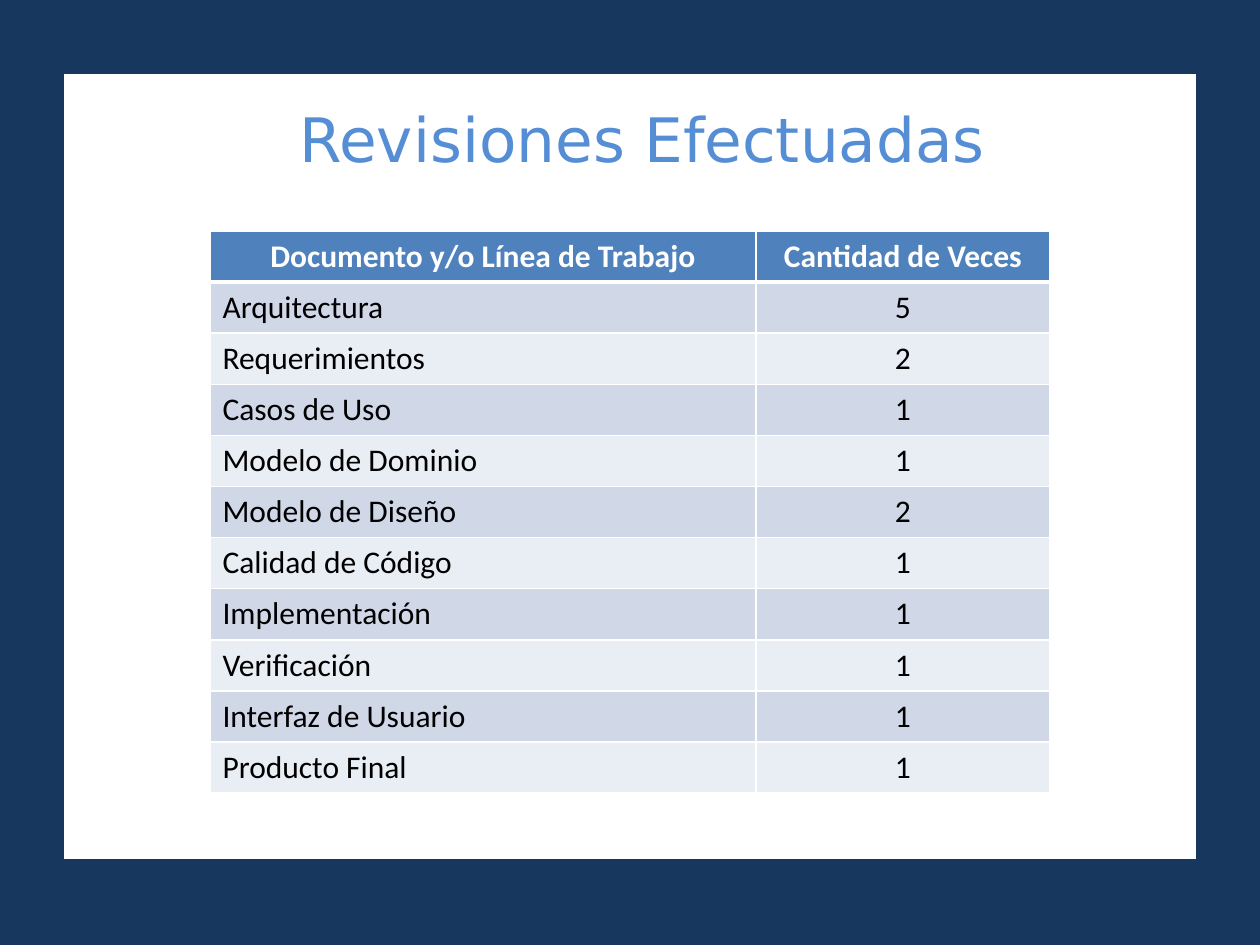
from lxml import etree
from pptx import Presentation
from pptx.dml.color import RGBColor
from pptx.enum.shapes import MSO_SHAPE
from pptx.enum.text import MSO_ANCHOR, MSO_AUTO_SIZE, PP_ALIGN
from pptx.oxml.ns import qn
from pptx.util import Emu, Pt

RECTANGLE = MSO_SHAPE.RECTANGLE
TOP = MSO_ANCHOR.TOP
NO_AUTOFIT = MSO_AUTO_SIZE.NONE
CENTER, LEFT = PP_ALIGN.CENTER, PP_ALIGN.LEFT

TITLE = "Revisiones Efectuadas"
HEADER = ("Documento y/o Línea de Trabajo", "Cantidad de Veces")
REVIEWS = [
    ("Arquitectura", 5),
    ("Requerimientos", 2),
    ("Casos de Uso", 1),
    ("Modelo de Dominio", 1),
    ("Modelo de Diseño", 2),
    ("Calidad de Código", 1),
    ("Implementación", 1),
    ("Verificación", 1),
    ("Interfaz de Usuario", 1),
    ("Producto Final", 1),
]

NAVY, WHITE, BLACK = "17375E", "FFFFFF", "000000"
TITLE_BLUE, HEADER_BLUE = "558ED5", "4F81BD"
BANDS = ("D0D8E8", "E9EDF4")

SLIDE_SIZE = (1260, 945)
PANEL_BOX = (63, 73, 1134, 787)
TITLE_BOX = (112, 95, 1061, 286)
TABLE_LEFT, TABLE_TOP = 210, 231
COLUMN_WIDTHS = (546, 294)
ROW_HEIGHT = 51


def px(length):
    return Emu(length * 914400 // 126)


def rgb(value):
    return RGBColor.from_string(value)


def format_text(frame, font_name, size, color, align, bold=False):
    paragraph = frame.paragraphs[0]
    paragraph.alignment = align
    font = paragraph.runs[0].font
    font.name, font.size, font.bold = font_name, Pt(size), bold
    font.color.rgb = rgb(color)


def set_borders(cell, widths):
    properties = cell._tc.get_or_add_tcPr()
    for position, (side, width) in enumerate(widths.items()):
        line = etree.Element(qn(f"a:ln{side}"), w=str(Pt(width)))
        fill = etree.SubElement(line, qn("a:solidFill"))
        etree.SubElement(fill, qn("a:srgbClr"), val=WHITE)
        properties.insert(position, line)


def add_panel(slide):
    panel = slide.shapes.add_shape(RECTANGLE, *map(px, PANEL_BOX))
    panel.shadow.inherit = False
    panel.fill.solid()
    panel.fill.fore_color.rgb = rgb(WHITE)
    panel.line.color.rgb = rgb(NAVY)
    panel.line.width = Pt(0.75)
    slide.shapes.title.element.addprevious(panel.element)


def add_title(slide):
    title = slide.shapes.title
    title.left, title.top, title.width, title.height = map(px, TITLE_BOX)
    frame = title.text_frame
    frame.text = TITLE
    frame.word_wrap = True
    frame.auto_size = NO_AUTOFIT
    frame.vertical_anchor = TOP
    format_text(frame, "DejaVu Sans", 35, TITLE_BLUE, CENTER)


def add_reviews(slide):
    rows = [HEADER, *REVIEWS]
    box = (TABLE_LEFT, TABLE_TOP, sum(COLUMN_WIDTHS), ROW_HEIGHT * len(rows))
    table = slide.shapes.add_table(len(rows), len(HEADER), *map(px, box)).table
    for column, width in zip(table.columns, COLUMN_WIDTHS):
        column.width = px(width)
    for r, row in enumerate(rows):
        table.rows[r].height = px(ROW_HEIGHT)
        is_header = r == 0
        for c, value in enumerate(row):
            cell = table.cell(r, c)
            cell.text = str(value)
            cell.fill.solid()
            cell.fill.fore_color.rgb = rgb(HEADER_BLUE if is_header else BANDS[(r - 1) % 2])
            format_text(
                cell.text_frame, "Calibri", 18, WHITE if is_header else BLACK,
                CENTER if is_header or c == 1 else LEFT, is_header,
            )
            top, bottom = (3 if r == 1 else 1), (3 if is_header else 1)
            set_borders(cell, {"L": 1, "R": 1, "T": top, "B": bottom})


def main():
    """Build the slide that counts the reviews made of each document."""
    deck = Presentation()
    deck.slide_width, deck.slide_height = map(px, SLIDE_SIZE)
    slide = deck.slides.add_slide(deck.slide_layouts[5])
    slide.background.fill.solid()
    slide.background.fill.fore_color.rgb = rgb(NAVY)
    add_panel(slide)
    add_title(slide)
    add_reviews(slide)
    deck.save("out.pptx")


if __name__ == "__main__":
    main()
